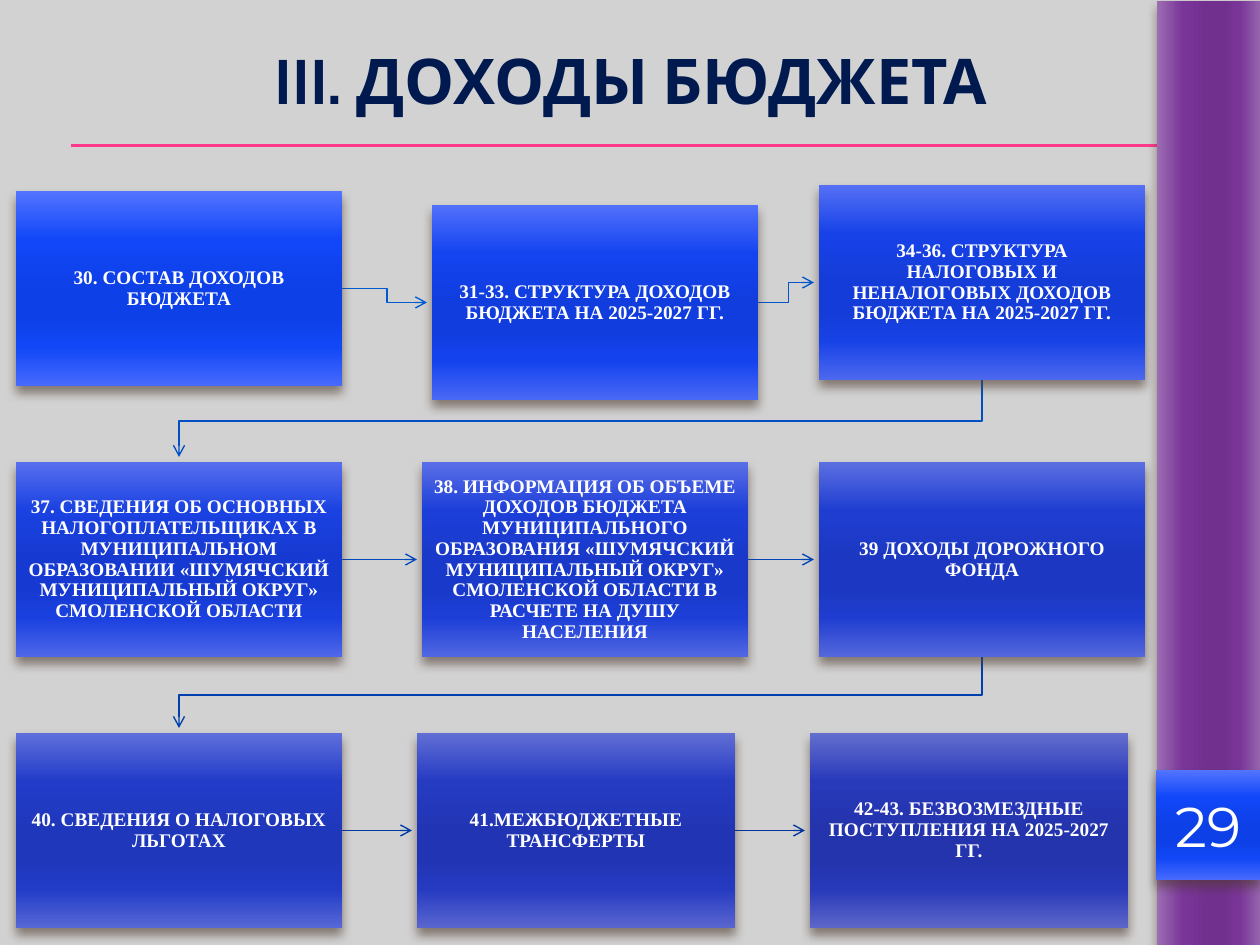
from itertools import pairwise

from pptx import Presentation
from pptx.dml.color import RGBColor
from pptx.enum.shapes import MSO_CONNECTOR as LINK, MSO_SHAPE as SHAPE
from pptx.enum.text import MSO_ANCHOR as ANCHOR, PP_ALIGN as ALIGN
from pptx.oxml import parse_xml
from pptx.oxml.ns import nsdecls, qn
from pptx.util import Emu, Pt

SCALE = 914400 / 126
STOPS = (0, 25, 50, 65, 80, 100)
PURPLE = ("9C6FB3", "7A3599", "71308E", "71308E", "7A3598", "9566AD")
BRIGHT = ("5374FF", "1147F8", "0E40E7", "0E40E7", "1147F6", "476AFD")
SECOND = ("5270FB", "1444F0", "113DDF", "113DDF", "1443EE", "4968F6")
LAST = ("646ECD", "2839BA", "2434AD", "2434AD", "2839B9", "5C66C8")
GAP = 5  # between an arrow tip and its box
HIGH = 195
BOXES = [  # left, top, width, text
    (16, 191, 326, "30. СОСТАВ ДОХОДОВ БЮДЖЕТА"),
    (432, 205, 326, "31-33. СТРУКТУРА ДОХОДОВ БЮДЖЕТА НА 2025-2027 ГГ."),
    (819, 185, 326, "34-36. СТРУКТУРА НАЛОГОВЫХ И НЕНАЛОГОВЫХ ДОХОДОВ "
                    "БЮДЖЕТА НА 2025-2027 ГГ."),
    (16, 462, 326, "37. СВЕДЕНИЯ ОБ ОСНОВНЫХ НАЛОГОПЛАТЕЛЬЩИКАХ В МУНИЦИПАЛЬНОМ "
                   "ОБРАЗОВАНИИ «ШУМЯЧСКИЙ МУНИЦИПАЛЬНЫЙ ОКРУГ» СМОЛЕНСКОЙ ОБЛАСТИ"),
    (422, 462, 326, "38. ИНФОРМАЦИЯ ОБ ОБЪЕМЕ ДОХОДОВ БЮДЖЕТА МУНИЦИПАЛЬНОГО "
                    "ОБРАЗОВАНИЯ «ШУМЯЧСКИЙ МУНИЦИПАЛЬНЫЙ ОКРУГ» СМОЛЕНСКОЙ ОБЛАСТИ "
                    "В РАСЧЕТЕ НА ДУШУ НАСЕЛЕНИЯ"),
    (819, 462, 326, "39 ДОХОДЫ ДОРОЖНОГО ФОНДА"),
    (16, 733, 326, "40. СВЕДЕНИЯ О НАЛОГОВЫХ ЛЬГОТАХ"),
    (417, 733, 318, "41.МЕЖБЮДЖЕТНЫЕ ТРАНСФЕРТЫ"),
    (810, 733, 318, "42-43. БЕЗВОЗМЕЗДНЫЕ ПОСТУПЛЕНИЯ НА 2025-2027 ГГ."),
]


def px(n):
    return Emu(round(n * SCALE))


def color(code):
    return RGBColor.from_string(code)


def blend(start, end, part):
    """Mix two hex colours; part runs from 0 to 1."""
    pairs = zip(bytes.fromhex(start), bytes.fromhex(end))
    return "".join(f"{round(a + (b - a) * part):02X}" for a, b in pairs)


def write(frame, text, size, font, shade, bold=False, inset=0, space=1.0):
    frame.word_wrap = True
    frame.vertical_anchor = ANCHOR.MIDDLE
    frame.margin_left = frame.margin_right = px(inset)
    frame.margin_top = frame.margin_bottom = px(inset)
    para = frame.paragraphs[0]
    para.alignment = ALIGN.CENTER
    para.line_spacing = space
    run = para.add_run()
    run.text = text
    run.font.size = Pt(size)
    run.font.name = font
    run.font.bold = bold
    run.font.color.rgb = color(shade)


def panel(slide, left, top, width, height, shades):
    """Add a rectangle with a banded gradient and a soft shadow below."""
    shape = slide.shapes.add_shape(
        SHAPE.RECTANGLE, px(left), px(top), px(width), px(height))
    shape.line.fill.background()
    shape.fill.gradient()
    shape.fill.gradient_angle = 270
    props = shape._element.spPr
    stops = props.find(qn("a:gradFill")).find(qn("a:gsLst"))
    for old in list(stops):
        stops.remove(old)
    for pos, shade in zip(STOPS, shades):
        stops.append(parse_xml(
            f'<a:gs {nsdecls("a")} pos="{pos * 1000}"><a:srgbClr val="{shade}"/></a:gs>'))
    shape.shadow.inherit = False
    props.find(qn("a:effectLst")).append(parse_xml(
        f'<a:outerShdw {nsdecls("a")} blurRad="{Pt(6)}" dist="{Pt(4)}" dir="5400000" '
        'rotWithShape="0"><a:srgbClr val="4E3B30"><a:alpha val="60000"/></a:srgbClr>'
        '</a:outerShdw>'))
    return shape


def line(slide, start, end, shade, width):
    link = slide.shapes.add_connector(
        LINK.STRAIGHT, *(px(n) for n in (*start, *end)))
    link.line.color.rgb = color(shade)
    link.line.width = Pt(width)
    link._element.spPr.append(parse_xml(f'<a:effectLst {nsdecls("a")}/>'))
    return link


def elbow(slide, points, shade, width):
    first, *rest = [(px(x), px(y)) for x, y in points]
    build = slide.shapes.build_freeform(*first)
    build.add_line_segments(rest, close=False)
    shape = build.convert_to_shape()
    shape.fill.background()
    shape.line.color.rgb = color(shade)
    shape.line.width = Pt(width)
    shape.shadow.inherit = False
    return shape


def route(one, two):
    """Points of the arrow from one box to the next."""
    left, top, width, _ = one
    to_left, to_top, to_width, _ = two
    if to_left > left:
        right, mid, to_mid = left + width, top + HIGH / 2, to_top + HIGH / 2
        bend = (right + to_left) / 2
        return [(right, mid), (bend, mid), (bend, to_mid), (to_left - GAP, to_mid)]
    mid, to_mid, foot = left + width / 2, to_left + to_width / 2, top + HIGH
    bend = (foot + to_top) / 2
    return [(mid, foot), (mid, bend), (to_mid, bend), (to_mid, to_top - GAP)]


def arrow(slide, points, shade):
    start, end = points[0], points[-1]
    if start[1] == end[1]:
        shape = line(slide, start, end, shade, 0.79)
    else:
        shape = elbow(slide, points, shade, 0.79)
    shape.line._get_or_add_ln().append(
        parse_xml(f'<a:tailEnd {nsdecls("a")} type="arrow"/>'))


def main():
    deck = Presentation()
    deck.slide_width, deck.slide_height = px(1260), px(945)
    slide = deck.slides.add_slide(deck.slide_layouts[6])
    slide.background.fill.solid()
    slide.background.fill.fore_color.rgb = color("D2D2D2")

    for y in (145, 146):
        line(slide, (71, y), (1260, y), "FF388C", 0.75)
    band = panel(slide, 736, 421, 945, 104, PURPLE)
    band.rotation = 270
    badge = panel(slide, 1156, 770, 104, 110, BRIGHT)
    write(badge.text_frame, "29", 32, "Montserrat", "FFFFFF")
    title = slide.shapes.add_textbox(px(64), px(0), px(1134), px(158))
    write(title.text_frame, "III. ДОХОДЫ БЮДЖЕТА", 36, "Cabin", "001A4F", bold=True)

    pairs = list(pairwise(BOXES))
    for i, (one, two) in enumerate(pairs):
        shade = blend("005BD3", "00349E", i / (len(pairs) - 1))
        arrow(slide, route(one, two), shade)
    for i, (left, top, width, text) in enumerate(BOXES):
        part = (i - 1) / (len(BOXES) - 2)
        shades = [blend(a, b, part) for a, b in zip(SECOND, LAST)] if i else BRIGHT
        box = panel(slide, left, top, width, HIGH, shades)
        write(box.text_frame, text, 11, "Times New Roman", "FFFFFF",
              bold=True, inset=11, space=0.9)
    deck.save("out.pptx")


if __name__ == "__main__":
    main()
